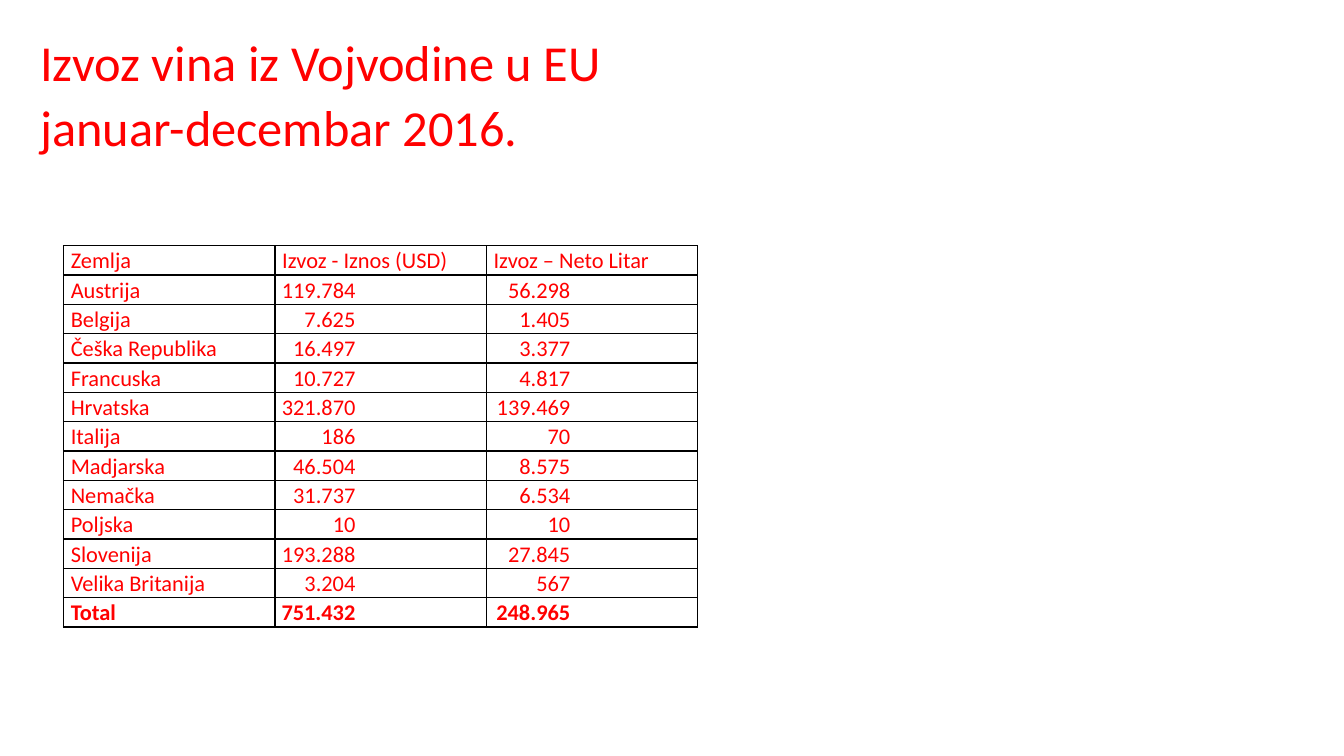
from dataclasses import dataclass

from lxml.etree import SubElement
from pptx import Presentation
from pptx.dml.color import RGBColor
from pptx.enum.text import MSO_ANCHOR as Anchor, MSO_AUTO_SIZE as AutoSize, PP_ALIGN as Align
from pptx.oxml.ns import qn
from pptx.slide import Slide
from pptx.table import _Cell as Cell
from pptx.text.text import _Paragraph as Paragraph
from pptx.util import Pt

COLORS = {"text": "FF0000", "border": "000000"}
FONT_NAME = "Calibri"
LINE_SPACING = 1.07
COLUMN_WIDTH = 151
ROW_HEIGHT = 20.9


@dataclass(frozen=True)
class Export:
    country: str
    dollars: str
    litres: str
    bold: bool = False


@dataclass(frozen=True)
class CellLayout:
    align: Align
    left_margin: float
    right_margin: float


LABEL = CellLayout(Align.LEFT, 5.2, 5.2)
# Wide right margins line up the last digits of the figures
FIGURES = [CellLayout(Align.RIGHT, 0, 93.5), CellLayout(Align.RIGHT, 0, 91)]

HEADINGS = Export("Zemlja", "Izvoz - Iznos (USD)", "Izvoz – Neto Litar")
EXPORTS = [
    Export("Austrija", "119.784", "56.298"),
    Export("Belgija", "7.625", "1.405"),
    Export("Češka Republika", "16.497", "3.377"),
    Export("Francuska", "10.727", "4.817"),
    Export("Hrvatska", "321.870", "139.469"),
    Export("Italija", "186", "70"),
    Export("Madjarska", "46.504", "8.575"),
    Export("Nemačka", "31.737", "6.534"),
    Export("Poljska", "10", "10"),
    Export("Slovenija", "193.288", "27.845"),
    Export("Velika Britanija", "3.204", "567"),
    Export("Total", "751.432", "248.965", bold=True),
]


def set_attributes(target: object, values: dict) -> None:
    for name, value in values.items():
        setattr(target, name, value)


def format_paragraph(paragraph: Paragraph, size: float, align: Align, bold: bool = False) -> None:
    set_attributes(paragraph, {"alignment": align, "line_spacing": LINE_SPACING})
    set_attributes(paragraph.font, {"name": FONT_NAME, "size": Pt(size), "bold": bold})
    paragraph.font.color.rgb = RGBColor.from_string(COLORS["text"])


def add_borders(cell: Cell) -> None:
    properties = cell._tc.get_or_add_tcPr()
    for side in ("lnL", "lnR", "lnT", "lnB"):
        line = SubElement(properties, qn(f"a:{side}"), w=str(Pt(1)))
        fill = SubElement(line, qn("a:solidFill"))
        SubElement(fill, qn("a:srgbClr"), val=COLORS["border"])


def fill_cell(cell: Cell, text: str, layout: CellLayout, bold: bool) -> None:
    set_attributes(cell, {
        "text": text,
        "margin_left": Pt(layout.left_margin),
        "margin_right": Pt(layout.right_margin),
        "margin_top": 0,
        "margin_bottom": 0,
    })
    add_borders(cell)
    cell.fill.background()
    format_paragraph(cell.text_frame.paragraphs[0], 16, layout.align, bold)


def add_title(slide: Slide) -> None:
    title = slide.shapes.title
    set_attributes(title, {"left": Pt(21.6), "top": Pt(13.5), "width": Pt(501), "height": Pt(104.4)})
    frame = title.text_frame
    set_attributes(frame, {
        "text": "Izvoz vina iz Vojvodine u EU\vjanuar-decembar 2016.",
        "word_wrap": True,
        "auto_size": AutoSize.NONE,
        "vertical_anchor": Anchor.MIDDLE,
    })
    format_paragraph(frame.paragraphs[0], 36, Align.LEFT)
    frame.paragraphs[0].space_after = Pt(8)


def add_export_table(slide: Slide) -> None:
    rows = [HEADINGS, *EXPORTS]
    table = slide.shapes.add_table(
        len(rows), 3, Pt(45.4), Pt(175.5), Pt(3 * COLUMN_WIDTH), Pt(len(rows) * ROW_HEIGHT)
    ).table
    set_attributes(table, {"first_row": False, "horz_banding": False})
    for column in table.columns:
        column.width = Pt(COLUMN_WIDTH)
    for row, export in zip(table.rows, rows):
        row.height = Pt(ROW_HEIGHT)
        texts = (export.country, export.dollars, export.litres)
        layouts = [LABEL] * 3 if export is HEADINGS else [LABEL, *FIGURES]
        for cell, text, layout in zip(row.cells, texts, layouts):
            fill_cell(cell, text, layout, export.bold)


def main() -> None:
    presentation = Presentation()
    set_attributes(presentation, {"slide_width": Pt(960), "slide_height": Pt(540)})
    slide = presentation.slides.add_slide(presentation.slide_layouts.get_by_name("Title Only"))
    add_export_table(slide)
    add_title(slide)
    presentation.save("out.pptx")


if __name__ == "__main__":
    main()
